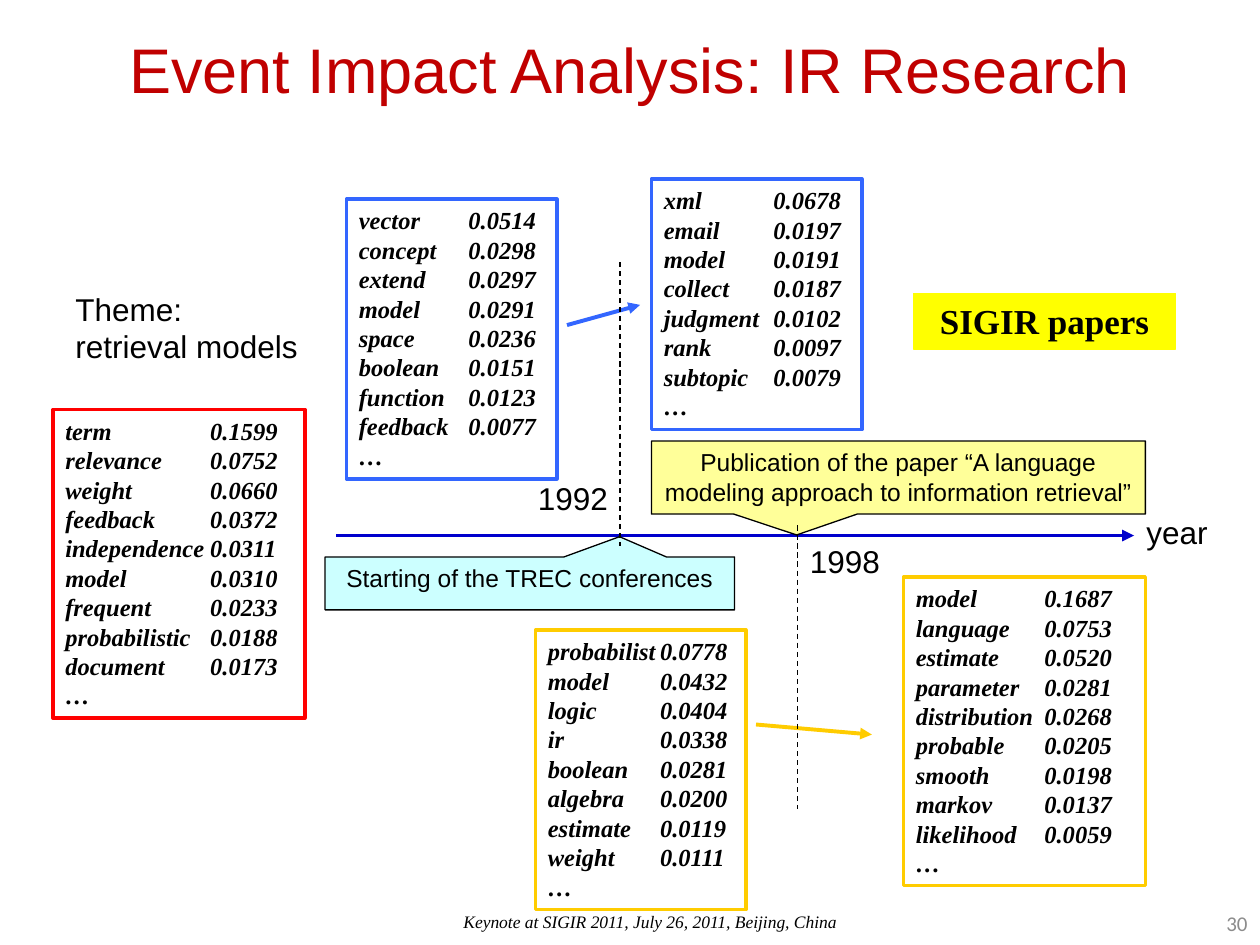
"""Build the slide on event impact analysis of IR research."""
from lxml import etree
from pptx import Presentation
from pptx.dml.color import RGBColor
from pptx.enum.dml import MSO_LINE
from pptx.enum.shapes import MSO_CONNECTOR, MSO_SHAPE
from pptx.enum.text import MSO_ANCHOR, PP_ALIGN
from pptx.oxml.ns import qn
from pptx.util import Inches, Pt

RECT, CALLOUT = MSO_SHAPE.RECTANGLE, MSO_SHAPE.RECTANGULAR_CALLOUT
STRAIGHT, DASH = MSO_CONNECTOR.STRAIGHT, MSO_LINE.DASH
LEFT, CENTER, RIGHT = PP_ALIGN.LEFT, PP_ALIGN.CENTER, PP_ALIGN.RIGHT
TOP, MIDDLE = MSO_ANCHOR.TOP, MSO_ANCHOR.MIDDLE
SERIF = "Times New Roman"
COLORS = {
    "black": "000000", "title": "C00000", "gray": "8C8C8C", "blue": "3366FF",
    "gold": "FFCC00", "red": "FF0000", "navy": "0000CC", "yellow": "FFFF00",
    "cream": "FFFF99", "aqua": "CCFFFF",
}

TERM_BOXES = [
    ((2.75, 1.58, 1.67, 2.22), "blue", 0.87, [
        ("vector", "0.0514"), ("concept", "0.0298"), ("extend", "0.0297"),
        ("model", "0.0291"), ("space", "0.0236"), ("boolean", "0.0151"),
        ("function", "0.0123"), ("feedback", "0.0077")]),
    ((5.17, 1.42, 1.67, 1.99), "blue", 0.87, [
        ("xml", "0.0678"), ("email", "0.0197"), ("model", "0.0191"),
        ("collect", "0.0187"), ("judgment", "0.0102"), ("rank", "0.0097"),
        ("subtopic", "0.0079")]),
    ((4.25, 5, 1.67, 2.22), "gold", 0.89, [
        ("probabilist", "0.0778"), ("model", "0.0432"), ("logic", "0.0404"),
        ("ir", "0.0338"), ("boolean", "0.0281"), ("algebra", "0.0200"),
        ("estimate", "0.0119"), ("weight", "0.0111")]),
    ((7.17, 4.58, 1.92, 2.45), "gold", 1.02, [
        ("model", "0.1687"), ("language", "0.0753"), ("estimate", "0.0520"),
        ("parameter", "0.0281"), ("distribution", "0.0268"),
        ("probable", "0.0205"), ("smooth", "0.0198"), ("markov", "0.0137"),
        ("likelihood", "0.0059")]),
    ((0.42, 3.25, 2, 2.45), "red", 1.15, [
        ("term", "0.1599"), ("relevance", "0.0752"), ("weight", "0.0660"),
        ("feedback", "0.0372"), ("independence", "0.0311"),
        ("model", "0.0310"), ("frequent", "0.0233"),
        ("probabilistic", "0.0188"), ("document", "0.0173")]),
]
ARROWS = [
    ((4.5, 2.58), (5.08, 2.42), "blue"),
    ((6, 5.75), (6.92, 5.83), "gold"),
    ((2.67, 4.25), (9, 4.25), "navy"),
]
EVENTS = [
    ("Publication of the paper “A language modeling approach to information retrieval”",
     (5.17, 3.5, 3.92, 0.58), "cream", (-0.206, 0.786), 0),
    ("Starting of the TREC conferences",
     (2.58, 4.42, 3.25, 0.42), "aqua", (-0.219, 0.883), 180),
]
EVENT_MARKS = [(4.92, 2.08), (6.33, 4.17)]
MARK_LENGTH = 2.25
LABELS = [
    ("1992", (4.17, 3.75, 0.83, 0.4)),
    ("1998", (6.33, 4.25, 0.83, 0.4)),
    ("year", (9, 4.02, 0.83, 0.4)),
    ("Theme: retrieval models", (0.5, 2.25, 2, 0.7)),
]

prs = Presentation()
prs.slide_width, prs.slide_height = Inches(10), Inches(7.5)
slide = prs.slides.add_slide(prs.slide_layouts[6])


def rgb(color):
    return RGBColor.from_string(COLORS[color])


def write(shape, text, size=14, font="Arial", color="black", bold=False,
          italic=False, align=LEFT, anchor=TOP, tab=None):
    frame = shape.text_frame
    frame.word_wrap = True
    frame.vertical_anchor = anchor
    frame.text = text
    for paragraph in frame.paragraphs:
        paragraph.alignment = align
        if tab:
            tabs = etree.SubElement(paragraph._p.get_or_add_pPr(), qn("a:tabLst"))
            etree.SubElement(tabs, qn("a:tab"), pos=str(Inches(tab)), algn="l")
        for run in paragraph.runs:
            run.font.size, run.font.name = Pt(size), font
            run.font.bold, run.font.italic = bold, italic
            run.font.color.rgb = rgb(color)


def add_label(text, place, **style):
    write(slide.shapes.add_textbox(*map(Inches, place)), text, **style)


def add_box(kind, place, line, width=0.75, fill=None):
    box = slide.shapes.add_shape(kind, *map(Inches, place))
    box.shadow.inherit = False
    if fill:
        box.fill.solid()
        box.fill.fore_color.rgb = rgb(fill)
    else:
        box.fill.background()
    box.line.color.rgb = rgb(line)
    box.line.width = Pt(width)
    return box


def add_line(start, end, color, width, arrow=False):
    line = slide.shapes.add_connector(STRAIGHT, *map(Inches, start + end))
    line.line.color.rgb = rgb(color)
    line.line.width = Pt(width)
    if arrow:
        etree.SubElement(line.line._get_or_add_ln(), qn("a:tailEnd"), type="triangle")
    else:
        line.line.dash_style = DASH
    etree.SubElement(line._element.spPr, qn("a:effectLst"))


add_label("Keynote at SIGIR 2011, July 26, 2011, Beijing, China",
          (3.58, 7.18, 4.08, 0.4), size=10, font=SERIF, italic=True)
add_label("Event Impact Analysis: IR Research", (0, 0, 10, 1.08),
          size=36, color="title", align=CENTER, anchor=MIDDLE)

for place, color, tab, terms in TERM_BOXES:
    rows = ["\t".join(term) for term in terms] + ["…"]
    write(add_box(RECT, place, color, 2), "\n".join(rows),
          font=SERIF, bold=True, italic=True, tab=tab)

for start, end, color in ARROWS:
    add_line(start, end, color, 2.25, arrow=True)

for text, place, fill, pointer, turn in EVENTS:
    event = add_box(CALLOUT, place, "black", fill=fill)
    event.adjustments[0], event.adjustments[1] = pointer
    event.rotation = turn
    write(event, text, align=CENTER)
    if turn:
        event.text_frame._txBody.bodyPr.set("rot", str(turn * 60000))

for x, y in EVENT_MARKS:
    add_line((x, y), (x, y + MARK_LENGTH), "black", 0.75)

for text, place in LABELS:
    add_label(text, place, size=18)

write(add_box(RECT, (7.25, 2.33, 2.08, 0.44), "yellow", fill="yellow"),
      "SIGIR papers", size=20, font=SERIF, bold=True, align=CENTER)
add_label("30", (7.67, 7.13, 2.33, 0.4), size=12, font="Calibri",
          color="gray", align=RIGHT, anchor=MIDDLE)

prs.save("out.pptx")
